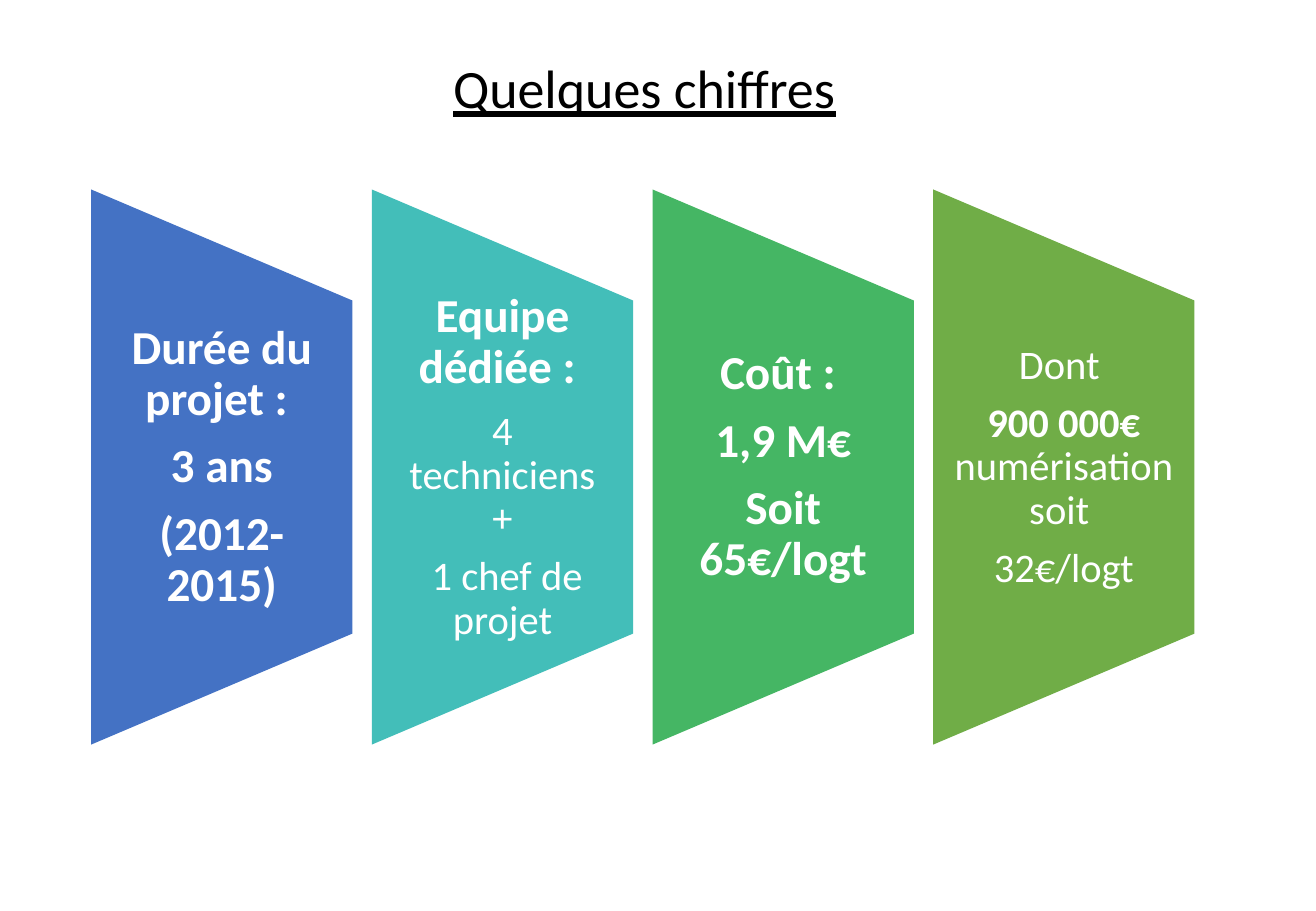
from dataclasses import dataclass

from pptx import Presentation
from pptx.dml.color import RGBColor
from pptx.enum.shapes import MSO_SHAPE
from pptx.enum.text import MSO_ANCHOR, MSO_AUTO_SIZE, PP_ALIGN
from pptx.slide import Slide
from pptx.text.text import _Run
from pptx.util import Emu, Pt

BLACK = RGBColor(0x00, 0x00, 0x00)
WHITE = RGBColor(0xFF, 0xFF, 0xFF)
BLUE = RGBColor(0x44, 0x72, 0xC4)
TEAL = RGBColor(0x43, 0xBE, 0xB9)
GREEN = RGBColor(0x45, 0xB6, 0x64)
OLIVE = RGBColor(0x70, 0xAD, 0x47)

FONT = "Calibri"
EMU_PER_PX = 9144
PANEL_LEFT, PANEL_TOP, PANEL_PITCH = 75, 156, 231
PANEL_W, PANEL_H = 215, 457
TEXT_TOP, TEXT_H = 248, 274


@dataclass(frozen=True)
class Span:
    text: str
    bold: bool = False


@dataclass(frozen=True)
class Line:
    size: int
    spans: tuple[Span, ...]


@dataclass(frozen=True)
class Panel:
    color: RGBColor
    inset: int
    lines: tuple[Line, ...]


def strong(text: str) -> Line:
    return Line(28, (Span(text, True),))


def plain(text: str) -> Line:
    return Line(24, (Span(text),))


PANELS = (
    Panel(BLUE, 19, (strong("Durée du projet : "), strong("3 ans"), strong("(2012-2015)"))),
    Panel(TEAL, 19, (strong("Equipe dédiée : "), plain("4 techniciens +"), plain(" 1 chef de projet"))),
    Panel(GREEN, 19, (strong("Coût : "), strong("1,9 M€"), strong("Soit 65€/logt"))),
    Panel(OLIVE, 17, (
        plain("Dont "),
        Line(24, (Span("900 000€ ", True), Span("numérisation soit "))),
        plain("32€/logt"),
    )),
)


def px(n: int) -> Emu:
    return Emu(n * EMU_PER_PX)


def format_run(r: _Run, size: int, color: RGBColor) -> None:
    r.font.name = FONT
    r.font.size = Pt(size)
    r.font.color.rgb = color


def draw_title(s: Slide) -> None:
    tf = s.shapes.add_textbox(px(363), px(40), px(414), px(64)).text_frame
    tf.word_wrap = True
    tf.auto_size = MSO_AUTO_SIZE.SHAPE_TO_FIT_TEXT
    tf.text = "Quelques chiffres"
    r = tf.paragraphs[0].runs[0]
    format_run(r, 32, BLACK)
    r.font.underline = True


def draw_panel(s: Slide, panel: Panel, left: int) -> None:
    shift = (PANEL_H - PANEL_W) // 2
    sp = s.shapes.add_shape(
        MSO_SHAPE.FLOWCHART_MANUAL_OPERATION,
        px(left - shift), px(PANEL_TOP + shift), px(PANEL_H), px(PANEL_W),
    )
    sp.rotation = 270
    sp.shadow.inherit = False
    sp.fill.solid()
    sp.fill.fore_color.rgb = panel.color
    sp.line.fill.background()

    tf = s.shapes.add_textbox(px(left), px(TEXT_TOP), px(PANEL_W), px(TEXT_H)).text_frame
    tf.word_wrap = True
    tf.vertical_anchor = MSO_ANCHOR.MIDDLE
    tf.margin_left = tf.margin_right = px(panel.inset)
    tf.margin_top = tf.margin_bottom = 0
    for i, line in enumerate(panel.lines):
        p = tf.add_paragraph() if i else tf.paragraphs[0]
        p.alignment = PP_ALIGN.CENTER
        p.line_spacing = 0.9
        p.space_after = Pt(line.size * 0.35)
        for span in line.spans:
            r = p.add_run()
            r.text = span.text
            format_run(r, line.size, WHITE)
            r.font.bold = span.bold


def main() -> None:
    prs = Presentation()
    prs.slide_width, prs.slide_height = px(1083), px(750)
    s = prs.slides.add_slide(prs.slide_layouts[6])
    draw_title(s)
    for i, panel in enumerate(PANELS):
        draw_panel(s, panel, PANEL_LEFT + i * PANEL_PITCH)
    prs.save("out.pptx")


if __name__ == "__main__":
    main()
